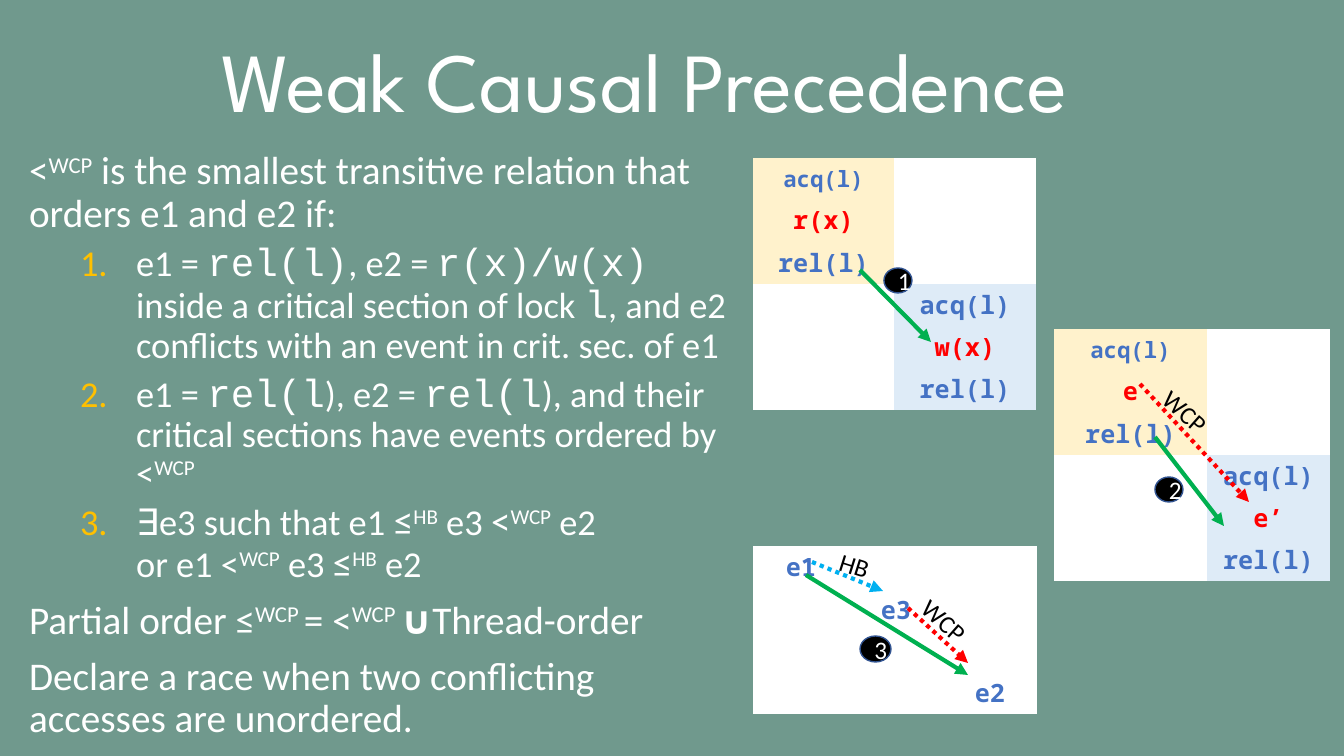
from lxml.etree import SubElement
from pptx import Presentation
from pptx.dml.color import RGBColor
from pptx.enum.dml import MSO_LINE
from pptx.enum.shapes import MSO_CONNECTOR, MSO_SHAPE
from pptx.enum.text import MSO_ANCHOR, MSO_AUTO_SIZE, PP_ALIGN
from pptx.oxml.ns import qn
from pptx.util import Pt

SCALE = 12192000 / 1344
C = {name: RGBColor.from_string(value) for name, value in {
    "back": "70998D", "white": "FFFFFF", "black": "000000", "gold": "FFC000",
    "blue": "4472C4", "red": "FF0000", "green": "00B050", "sky": "00B0F0",
    "cream": "FFF2CC", "ice": "DEEBF7", "rim": "325491"}.items()}


def px(*lengths):
    return [round(n * SCALE) for n in lengths]


def add_run(p, text, color, **font):
    r = p.add_run()
    r.text = text
    r.font.color.rgb = C[color]
    for key, value in font.items():
        setattr(r.font, key, value)
    return r


prs = Presentation()
prs.slide_width, prs.slide_height = px(1344, 756)
s = prs.slides.add_slide(prs.slide_layouts[1])
s.background.fill.solid()
s.background.fill.fore_color.rgb = C["back"]
title, body = s.placeholders
for sp, box in ((title, (65, 12, 1159, 146)), (body, (19, 146, 730, 521))):
    sp.left, sp.top, sp.width, sp.height = px(*box)
    sp.text_frame.auto_size = MSO_AUTO_SIZE.NONE
    sp.text_frame.word_wrap = True

title.text_frame.vertical_anchor = MSO_ANCHOR.MIDDLE
p = title.text_frame.paragraphs[0]
p.alignment, p.line_spacing = PP_ALIGN.CENTER, 0.9
add_run(p, "Weak Causal Precedence", "white", name="League Spartan", size=Pt(60))

WCP, HB = ("WCP", "up"), ("HB", "up")
paragraphs = [
    (0, ["<", WCP, " is the smallest transitive relation that orders e1 and e2 if:"]),
    (1, ["e1 = ", ("rel(l)", "code"), ", e2 = ", ("r(x)/w(x)", "code"),
         " inside a critical section of lock ", ("l", "code"),
         ", and e2 conflicts with an event in crit. sec. of e1"]),
    (1, ["e1 = ", ("rel(l", "code"), "), e2 = ", ("rel(l", "code"),
         "), and their critical sections have events ordered by <", WCP]),
    (1, ["∃e3 such that e1 ", ("≤", "big"), HB, " e3 ", ("<", "big"), WCP, " e2 ", "\n",
         "or e1 <", WCP, " e3 ", ("≤", "big"), HB, " e2"]),
    (0, ["Partial order ≤", ("WCP ", "up"), "= <", ("WCP ", "up"), ("∪", "bold"),
         "Thread-order"]),
    (0, ["Declare a race when two conflicting accesses are unordered."]),
]
styles = {"plain": {}, "up": {}, "big": {"size": Pt(28)}, "bold": {"bold": True},
          "code": {"size": Pt(28), "name": "Courier New"}}
tf = body.text_frame
tf.vertical_anchor = MSO_ANCHOR.TOP
for i, (level, parts) in enumerate(paragraphs):
    p = tf.add_paragraph() if i else tf.paragraphs[0]
    p.level, p.line_spacing = level, 0.9
    p.space_before, p.space_after = Pt(5 if level else 10), Pt(0)
    pPr = p._p.get_or_add_pPr()
    margin, indent = px(107, -56) if level else (0, 0)
    pPr.set("marL", str(margin))
    pPr.set("indent", str(indent))
    if level:
        SubElement(SubElement(pPr, qn("a:buClr")), qn("a:srgbClr"), val=str(C["gold"]))
        SubElement(pPr, qn("a:buFont"), typeface="+mj-lt")
        SubElement(pPr, qn("a:buAutoNum"), type="arabicPeriod")
    else:
        SubElement(pPr, qn("a:buNone"))
    for part in parts:
        if part == "\n":
            p.add_line_break()
            continue
        text, style = (part, "plain") if isinstance(part, str) else part
        font = {"name": "Calibri", "size": Pt(26 if level else 28)} | styles[style]
        r = add_run(p, text, "white", **font)
        if style == "up":
            r._r.get_or_add_rPr().set("baseline", "30000")

traces = [
    (753, 158, (141, 142), ("cream", "ice"), 16,
     ["acq(l)", "r(x)", "rel(l)"], ["acq(l)", "w(x)", "rel(l)"]),
    (1054, 329, (153, 123), ("cream", "ice"), 16,
     ["acq(l)", "e", "rel(l)"], ["acq(l)", "e’", "rel(l)"]),
    (753, 546, (96, 94, 94), ("white",) * 3, 18, ["e1"], ["e3"], ["", "e2"]),
]
for left, top, widths, fills, first_size, *threads in traces:
    events = [(col, text) for col, thread in enumerate(threads) for text in thread]
    if len(threads) == 3:
        events[2] = (1, "")
    n = len(events)
    table = s.shapes.add_table(n, len(widths), *px(left, top, sum(widths), 41 * n)).table
    table.first_row = table.horz_banding = False
    table._tbl.tblPr.find(qn("a:tableStyleId")).text = "{2D5ABB26-0587-4C30-8999-92F81FD0307C}"
    for column, width in zip(table.columns, widths):
        column.width = px(width)[0]
    for i, (active, text) in enumerate(events):
        for col, fill in enumerate(fills):
            cell = table.cell(i, col)
            cell.margin_left, cell.margin_right, cell.margin_top, cell.margin_bottom = px(7, 7, 4, 4)
            cell.vertical_anchor = MSO_ANCHOR.MIDDLE
            cell.fill.solid()
            cell.fill.fore_color.rgb = C[fill if col == active else "white"]
            if col == active and text:
                p = cell.text_frame.paragraphs[0]
                p.alignment = PP_ALIGN.CENTER
                add_run(p, text, "red" if text in ("r(x)", "w(x)", "e", "e’") else "blue",
                        name="Noto Sans Mono", bold=True, size=Pt(18 if i else first_size))

for number, box in (("1", (884, 268, 28, 25)), ("2", (1155, 477, 28, 25)),
                    ("3", (860, 636, 31, 26))):
    sp = s.shapes.add_shape(MSO_SHAPE.OVAL, *px(*box))
    sp.shadow.inherit = False
    sp.fill.solid()
    sp.fill.fore_color.rgb = C["black"]
    sp.line.color.rgb, sp.line.width = C["rim"], Pt(1)
    p = sp.text_frame.paragraphs[0]
    p.alignment = PP_ALIGN.CENTER
    add_run(p, number, "white", name="Calibri", size=Pt(18))

arrows = [
    ("green", 860, 270, 931, 342), ("green", 1155, 437, 1224, 526),
    ("green", 806, 575, 968, 675), ("sky", 812, 562, 883, 591),
    ("red", 908, 608, 968, 663), ("red", 1140, 384, 1249, 502),
]
for color, *ends in arrows:
    arrow = s.shapes.add_connector(MSO_CONNECTOR.STRAIGHT, *px(*ends))
    arrow.line.color.rgb, arrow.line.width = C[color], Pt(3)
    if color != "green":
        arrow.line.dash_style = MSO_LINE.ROUND_DOT
    SubElement(arrow.line._get_or_add_ln(), qn("a:tailEnd"), type="triangle")
    SubElement(arrow._element.spPr, qn("a:effectLst"))

for text, angle, box in (("HB", 17.6, (830, 545, 50, 40)), ("WCP", 41.4, (910, 601, 70, 40)),
                         ("WCP", 41.4, (1151, 392, 70, 40))):
    label = s.shapes.add_textbox(*px(*box))
    label.rotation = angle
    label.text_frame.word_wrap = False
    label.text_frame.auto_size = MSO_AUTO_SIZE.SHAPE_TO_FIT_TEXT
    add_run(label.text_frame.paragraphs[0], text, "black", name="Calibri", size=Pt(18))

prs.save("out.pptx")
